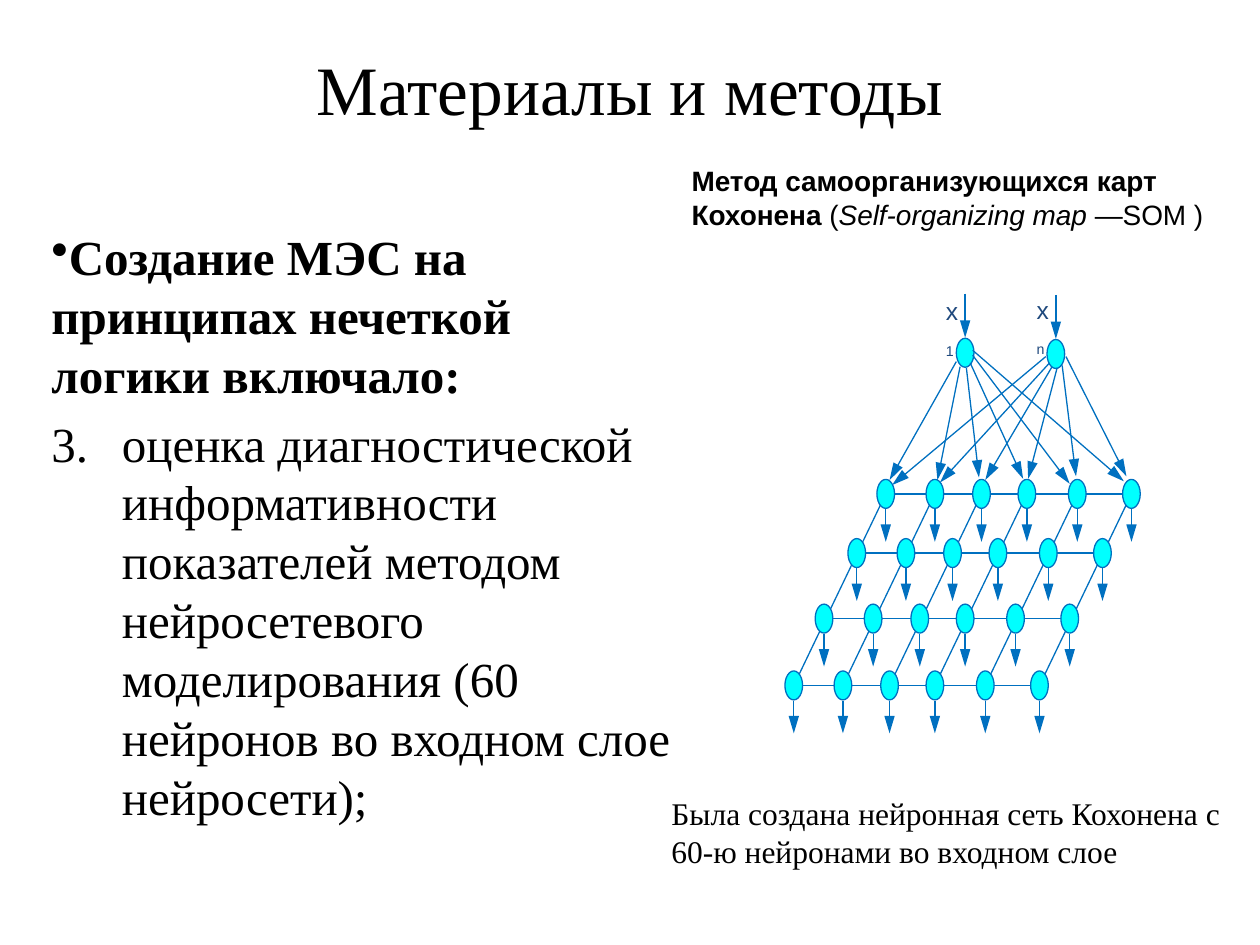
from lxml import etree
from pptx import Presentation
from pptx.dml.color import RGBColor
from pptx.enum.shapes import MSO_CONNECTOR, MSO_SHAPE
from pptx.enum.text import MSO_ANCHOR, PP_ALIGN
from pptx.oxml.ns import qn
from pptx.util import Inches, Pt

STRAIGHT = MSO_CONNECTOR.STRAIGHT
OVAL = MSO_SHAPE.OVAL
CENTER = PP_ALIGN.CENTER
TOP, MIDDLE = MSO_ANCHOR.TOP, MSO_ANCHOR.MIDDLE

THEME = {
    "serif": "Times New Roman", "sans": "Arial",
    "text": RGBColor(0, 0, 0), "label": RGBColor(0x1F, 0x49, 0x7D),
    "line": RGBColor(0, 0x70, 0xC0), "node": RGBColor(0, 0xFF, 0xFF),
    "title": 39.6, "body": 28, "method": 16, "caption": 18, "input": 14,
    "stroke": 0.75,
}

TITLE = "Материалы и методы"
GOAL = "Создание МЭС на принципах нечеткой логики включало:"
STEP = ("оценка диагностической информативности показателей методом "
        "нейросетевого моделирования (60 нейронов во входном слое нейросети);")
STEP_NUMBER = 3
METHOD = [  # text, bold, italic
    ("Метод самоорганизующихся карт Кохонена ", True, False),
    ("(", False, False),
    ("Self-organizing map", False, True),
    (" —SOM )", False, False),
]
CAPTION = "Была создана нейронная сеть Кохонена с 60-ю нейронами во входном слое"

# Kohonen map: node centres, bottom row first
NODE_W, NODE_H = 0.14, 0.23
COLUMNS = [6.30, 6.69, 7.06, 7.42, 7.82, 8.25]
ROWS = [(0, 5.44), (0.24, 4.91), (0.5, 4.39), (0.73, 3.92)]  # x shift, y
OUTPUT_GAP, OUTPUT_LENGTH = 0.12, 0.26
INPUTS = [
    {"index": "1", "node": (7.66, 2.80), "label": (7.41, 2.30), "rays": [
        ((7.59, 2.87), (7.06, 3.81)), ((7.62, 2.91), (7.44, 3.81)),
        ((7.67, 2.92), (7.77, 3.79)), ((7.70, 2.88), (8.12, 3.80)),
        ((7.72, 2.82), (8.49, 3.84)), ((7.72, 2.78), (8.92, 3.82))]},
    {"index": "n", "node": (8.38, 2.81), "label": (8.13, 2.29), "rays": [
        ((8.30, 2.83), (7.08, 3.85)), ((8.33, 2.88), (7.46, 3.83)),
        ((8.35, 2.91), (7.82, 3.81)), ((8.39, 2.92), (8.16, 3.80)),
        ((8.43, 2.90), (8.54, 3.78)), ((8.46, 2.83), (8.94, 3.78))]},
]


def style(target, size, face, color=THEME["text"]):
    font = target.font
    font.size, font.name = Pt(size), face
    font.color.rgb = color


def add_text_box(shapes, left, top, width, height):
    box = shapes.add_textbox(*map(Inches, (left, top, width, height)))
    tf = box.text_frame
    tf.word_wrap = True
    tf.vertical_anchor = TOP
    return tf


def set_marker(p, tag, indent=0, **attributes):
    """Give a paragraph a bullet or a number with a hanging indent."""
    pPr = p._p.get_or_add_pPr()
    pPr.set("marL", str(Inches(indent)))
    pPr.set("indent", str(-Inches(indent)))
    marker = etree.SubElement(pPr, qn(tag))
    for name, value in attributes.items():
        marker.set(name, value)


def add_line(shapes, start, end, arrow=False):
    line = shapes.add_connector(STRAIGHT, *map(Inches, (*start, *end)))
    line.line.color.rgb = THEME["line"]
    line.line.width = Pt(THEME["stroke"])
    if arrow:
        etree.SubElement(line.line._get_or_add_ln(), qn("a:tailEnd"),
                         type="triangle", w="med", len="lg")
    etree.SubElement(line._element.spPr, qn("a:effectLst"))


def add_node(shapes, x, y):
    sp = shapes.add_shape(OVAL, Inches(x - NODE_W / 2), Inches(y - NODE_H / 2),
                          Inches(NODE_W), Inches(NODE_H))
    sp.shadow.inherit = False
    sp.fill.solid()
    sp.fill.fore_color.rgb = THEME["node"]
    sp.line.color.rgb = THEME["line"]
    sp.line.width = Pt(THEME["stroke"])


def add_title(s):
    title = s.shapes.title
    title.left, title.top = Inches(0.5), Inches(0.3)
    title.width, title.height = Inches(9), Inches(0.79)
    tf = title.text_frame
    tf.text = TITLE
    tf.vertical_anchor = MIDDLE
    p = tf.paragraphs[0]
    p.alignment = CENTER
    style(p, THEME["title"], THEME["serif"])


def add_texts(shapes):
    tf = add_text_box(shapes, 0.31, 1.75, 5.16, 4.95)
    goal, step = tf.paragraphs[0], tf.add_paragraph()
    for p, text in ((goal, GOAL), (step, STEP)):
        p.text = text
        p.space_before = Pt(0.2 * THEME["body"])
        style(p, THEME["body"], THEME["serif"])
    goal.font.bold = True
    defaults = [p._p.pPr.find(qn("a:defRPr")) for p in (goal, step)]
    set_marker(goal, "a:buChar", char="•")
    set_marker(step, "a:buAutoNum", 0.56, type="arabicPeriod",
               startAt=str(STEP_NUMBER))
    for p, default in zip((goal, step), defaults):
        p._p.pPr.append(default)  # the schema wants it after the marker

    p = add_text_box(shapes, 5.39, 1.25, 4.45, 0.64).paragraphs[0]
    style(p, THEME["method"], THEME["sans"])
    for text, bold, italic in METHOD:
        r = p.add_run()
        r.text = text
        r.font.bold, r.font.italic = bold, italic

    p = add_text_box(shapes, 5.23, 6.25, 4.61, 0.71).paragraphs[0]
    p.text = CAPTION
    style(p, THEME["caption"], THEME["serif"])


def add_network(shapes):
    for item in INPUTS:
        p = add_text_box(shapes, *item["label"], 0.3, 0.43).paragraphs[0]
        style(p, THEME["input"], THEME["sans"], THEME["label"])
        for text in ("x", item["index"]):
            r = p.add_run()
            r.text = text
        r.font._element.set("baseline", "-25000")

    (bottom_shift, bottom_y), (top_shift, top_y) = ROWS[0], ROWS[-1]
    for x in COLUMNS:
        add_line(shapes, (x + bottom_shift, bottom_y), (x + top_shift, top_y))
    for shift, y in ROWS:
        add_line(shapes, (COLUMNS[0] + shift, y), (COLUMNS[-1] + shift, y))
        for x in COLUMNS:
            add_node(shapes, x + shift, y)
            start = y + OUTPUT_GAP
            add_line(shapes, (x + shift, start),
                     (x + shift, start + OUTPUT_LENGTH), arrow=True)

    for item in INPUTS:
        x, y = item["node"]
        add_node(shapes, x, y)
        add_line(shapes, (x, y - 0.47), (x, y - 0.12), arrow=True)
        for start, end in item["rays"]:
            add_line(shapes, start, end, arrow=True)


def main():
    prs = Presentation()
    prs.slide_width, prs.slide_height = Inches(10), Inches(7.5)
    s = prs.slides.add_slide(prs.slide_layouts[5])
    add_title(s)
    add_texts(s.shapes)
    add_network(s.shapes.add_group_shape().shapes)
    prs.save("out.pptx")


if __name__ == "__main__":
    main()
